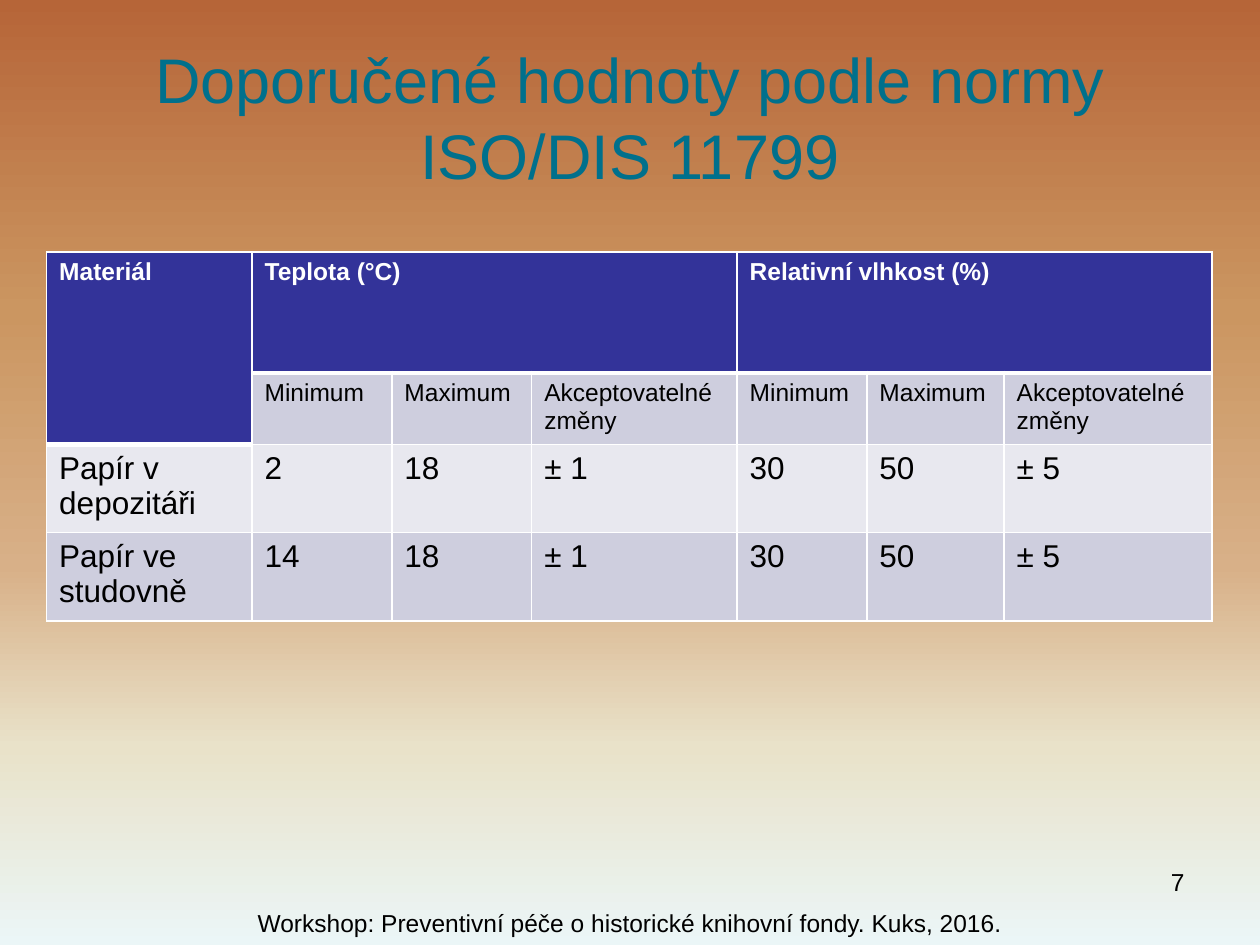
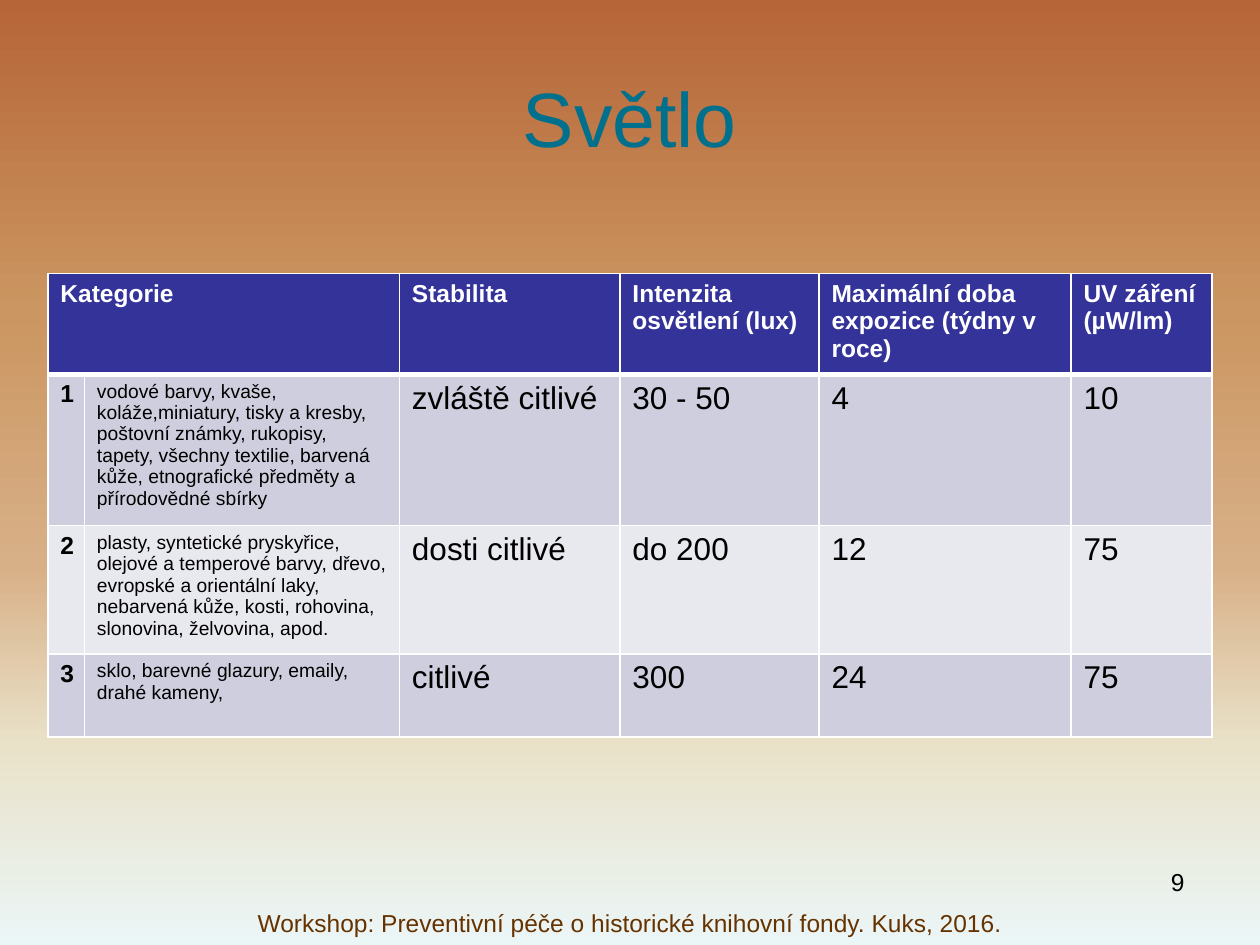
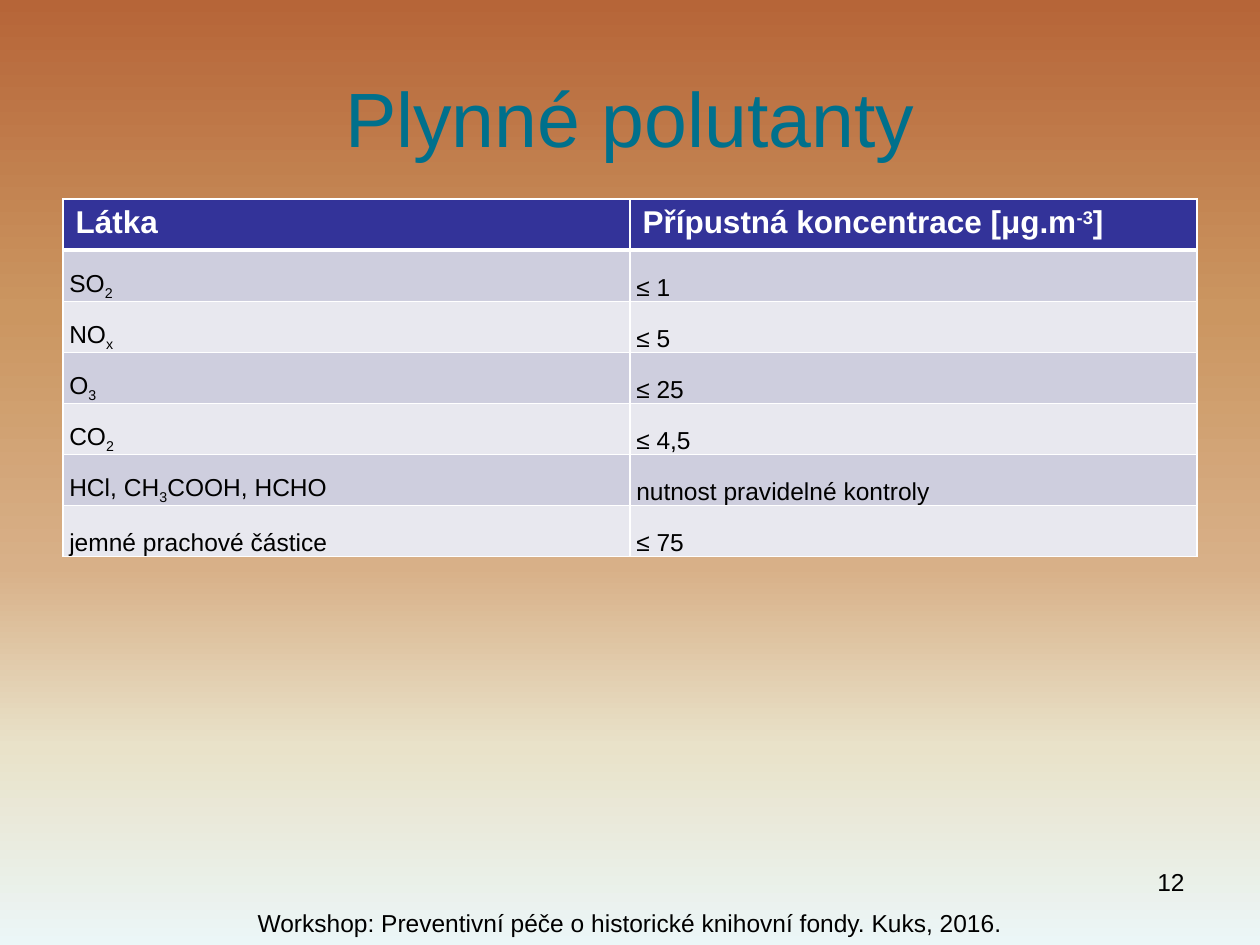
from copy import deepcopy

from lxml import etree
from pptx import Presentation
from pptx.dml.color import RGBColor
from pptx.enum.text import MSO_ANCHOR, MSO_AUTO_SIZE, PP_ALIGN
from pptx.oxml.ns import qn
from pptx.util import Inches, Pt

LEFT, CENTER, RIGHT, JUSTIFY = PP_ALIGN.LEFT, PP_ALIGN.CENTER, PP_ALIGN.RIGHT, PP_ALIGN.JUSTIFY
MIDDLE, BOTTOM = MSO_ANCHOR.MIDDLE, MSO_ANCHOR.BOTTOM
NO_AUTOFIT = MSO_AUTO_SIZE.NONE

FONT = "Arial"
COLORS = {
    "title": "00708C",
    "text": "000000",
    "brown": "663300",
    "white": "FFFFFF",
    "header": "333399",
    "odd": "CECEDE",
    "even": "E8E8EF",
}
BACKGROUND = [(0, "B66538"), (33, "CB9661"), (60, "D8B088"), (79, "E9E2C9"), (100, "EBF6F7")]
FOOTER = "Workshop: Preventivní péče o historické knihovní fondy. Kuks, 2016."
TITLE_BOX = (0.5, 0.3, 9, 1.25)
FOOTER_BOX = (0, 7.16, 10, 0.34)
NUMBER_BOX = (7.17, 6.83, 2.33, 0.52)

CLIMATE_ROWS = [
    ["Materiál", "Teplota (°C)", "", "", "Relativní vlhkost (%)", "", ""],
    [""] + ["Minimum", "Maximum", "Akceptovatelné změny"] * 2,
    ["Papír v depozitáři", "2", "18", "± 1", "30", "50", "± 5"],
    ["Papír ve studovně", "14", "18", "± 1", "30", "50", "± 5"],
]
LIGHT_ROWS = [
    ["Kategorie", "", "Stabilita", "Intenzita osvětlení (lux)",
     "Maximální doba expozice (týdny v roce)", "UV záření (µW/lm)"],
    ["1", "vodové barvy, kvaše, koláže,miniatury, tisky a kresby, poštovní známky, rukopisy, "
     "tapety, všechny textilie, barvená kůže, etnografické předměty a přírodovědné sbírky",
     "zvláště citlivé", "30 - 50", "4", "10"],
    ["2", "plasty, syntetické pryskyřice, olejové a temperové barvy, dřevo, evropské a "
     "orientální laky, nebarvená kůže, kosti, rohovina, slonovina, želvovina, apod.",
     "dosti citlivé", "do 200", "12", "75"],
    ["3", "sklo, barevné glazury, emaily, drahé kameny,", "citlivé", "300", "24", "75"],
]
POLLUTANT_ROWS = [
    ["Látka", "Přípustná koncentrace [μg.m|-3|]"],
    ["SO|2", "≤ 1"],
    ["NO|x", "≤ 5"],
    ["O|3", "≤ 25"],
    ["CO|2", "≤ 4,5"],
    ["HCl, CH|3|COOH, HCHO", "nutnost pravidelné kontroly"],
    ["jemné prachové částice", "≤ 75"],
]


def inches(box):
    """Turn a box of numbers into lengths."""
    return [Inches(value) for value in box]


def write(paragraph, text, size, color, bold=False, align=LEFT, baseline=0):
    """Write text whose every second part between bars is raised or lowered."""
    paragraph.alignment = align
    for index, part in enumerate(text.split("|")):
        if not part:
            continue
        run = paragraph.add_run()
        run.text = part
        run.font.name = FONT
        run.font.size = Pt(size)
        run.font.bold = bold
        run.font.color.rgb = RGBColor.from_string(COLORS[color])
        if index % 2:
            run.font._element.set("baseline", str(baseline * 1000))


def set_background(master):
    """Give the slide master the vertical gradient."""
    fill = master.background.fill
    fill.gradient()
    fill.gradient_angle = 270
    stops = master.element.find(".//" + qn("a:gsLst"))
    pattern = deepcopy(stops[0])
    for stop in list(stops):
        stops.remove(stop)
    for position, color in BACKGROUND:
        stop = deepcopy(pattern)
        stop.set("pos", str(position * 1000))
        for child in list(stop):
            stop.remove(child)
        etree.SubElement(stop, qn("a:srgbClr"), val=color)
        stops.append(stop)


def add_label(slide, box, text, color, align):
    """Add a line of small text in the footer area."""
    text_frame = slide.shapes.add_textbox(*inches(box)).text_frame
    text_frame.word_wrap = True
    write(text_frame.paragraphs[0], text, 14, color, align=align)


def add_content_slide(presentation, title, number, title_size=44, footer_color="text"):
    """Add a slide with its title, footer and number."""
    slide = presentation.slides.add_slide(presentation.slide_layouts[5])
    shape = slide.shapes.title
    shape.left, shape.top, shape.width, shape.height = inches(TITLE_BOX)
    shape.text_frame.auto_size = NO_AUTOFIT
    shape.text_frame.vertical_anchor = MIDDLE
    write(shape.text_frame.paragraphs[0], title, title_size, "title", align=CENTER)
    add_label(slide, FOOTER_BOX, FOOTER, footer_color, CENTER)
    add_label(slide, NUMBER_BOX, number, "text", RIGHT)
    return slide


def set_border(cell, side, width):
    """Draw one white border of a cell."""
    properties = cell._tc.get_or_add_tcPr()
    line = etree.SubElement(properties, qn("a:ln" + side), w=str(Pt(width)))
    fill = etree.SubElement(line, qn("a:solidFill"))
    etree.SubElement(fill, qn("a:srgbClr"), val=COLORS["white"])


def add_grid(slide, corner, widths, heights, rows, sizes, merges=(), bold_columns=()):
    """Add a banded table with its corner at the given place."""
    box = (*corner, sum(widths), sum(heights))
    table = slide.shapes.add_table(len(rows), len(widths), *inches(box)).table
    table.horz_banding = False
    for column, width in zip(table.columns, widths):
        column.width = Inches(width)
    for row, height in zip(table.rows, heights):
        row.height = Inches(height)
    for first, last in merges:
        table.cell(*first).merge(table.cell(*last))
    for row_index, texts in enumerate(rows):
        for column_index, text in enumerate(texts):
            cell = table.cell(row_index, column_index)
            header = row_index == 0 or cell.is_spanned
            set_border(cell, "L", 1)
            set_border(cell, "R", 1)
            if row_index == 0:
                set_border(cell, "T", 1)
            set_border(cell, "B", 3 if header else 1)
            band = "header" if header else ("even", "odd")[row_index % 2]
            cell.fill.solid()
            cell.fill.fore_color.rgb = RGBColor.from_string(COLORS[band])
            write(cell.text_frame.paragraphs[0], text, sizes[row_index][column_index],
                  "white" if header else "text", header or column_index in bold_columns,
                  baseline=30 if header else -25)
    return table


def build_climate_slide(presentation):
    """Build the slide of recommended temperature and humidity."""
    slide = add_content_slide(
        presentation, "Doporučené hodnoty podle normy ISO/DIS 11799", "7", title_size=36)
    add_grid(slide, (0.37, 2), [1.63, 1.11, 1.11, 1.63, 1.03, 1.09, 1.65],
             [0.96, 0.56, 0.66, 0.66], CLIMATE_ROWS, [[14] * 7] * 2 + [[18] * 7] * 2,
             merges=[((0, 0), (1, 0)), ((0, 1), (0, 3)), ((0, 4), (0, 6))])


def build_light_slide(presentation):
    """Build the slide of light sensitivity categories."""
    slide = add_content_slide(presentation, "Světlo", "9", footer_color="brown")
    add_grid(slide, (0.38, 2.17), [0.29, 2.5, 1.75, 1.58, 2, 1.12],
             [0.76, 1.12, 0.95, 0.66], LIGHT_ROWS, [[14] * 6] + [[14, 11] + [18] * 4] * 3,
             merges=[((0, 0), (0, 1))], bold_columns=[0])


def build_pollutant_slide(presentation):
    """Build the slide of gaseous pollutant limits."""
    slide = add_content_slide(presentation, "Plynné polutanty", "12")
    count = len(POLLUTANT_ROWS)
    table = add_grid(slide, (0.5, 1.58), [4.5, 4.5], [2.84 / count] * count,
                     POLLUTANT_ROWS, [[18] * 2] + [[14] * 2] * (count - 1))
    for row in list(table.rows)[1:]:
        for cell in row.cells:
            cell.vertical_anchor = BOTTOM
            cell.margin_left = cell.margin_right = Inches(0.05)
            cell.margin_top = cell.margin_bottom = 0
            paragraph = cell.text_frame.paragraphs[0]
            paragraph.alignment = JUSTIFY
            paragraph.line_spacing = 1.15
            paragraph.space_after = Pt(10)


def main():
    """Build and save the presentation."""
    presentation = Presentation()
    presentation.slide_width = Inches(10)
    presentation.slide_height = Inches(7.5)
    set_background(presentation.slide_master)
    build_climate_slide(presentation)
    build_light_slide(presentation)
    build_pollutant_slide(presentation)
    presentation.save("out.pptx")


if __name__ == "__main__":
    main()
